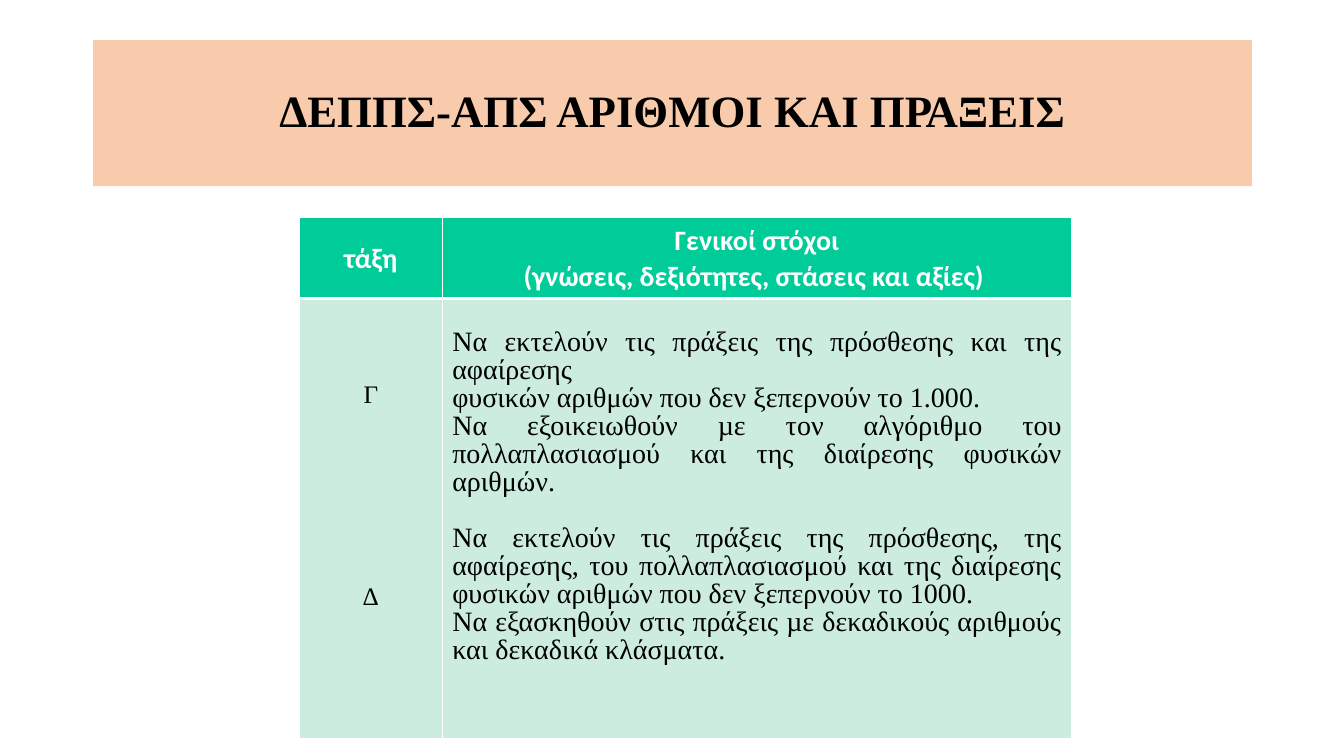
from pptx import Presentation
from pptx.dml.color import RGBColor
from pptx.enum.shapes import MSO_SHAPE
from pptx.enum.text import MSO_ANCHOR, PP_ALIGN
from pptx.oxml import parse_xml
from pptx.oxml.ns import nsdecls
from pptx.util import Emu, Pt

# Content
TITLE = "ΔΕΠΠΣ-ΑΠΣ ΑΡΙΘΜΟΙ ΚΑΙ ΠΡΑΞΕΙΣ"
HEADERS = ["τάξη", "Γενικοί στόχοι\v(γνώσεις, δεξιότητες, στάσεις και αξίες) "]
GRADES = ["Γ", "Δ"]
GOALS = [
    [
        "Να εκτελούν τις πράξεις της πρόσθεσης και της αφαίρεσης",
        "φυσικών αριθμών που δεν ξεπερνούν το 1.000.",
        "Να εξοικειωθούν µε τον αλγόριθμο του πολλαπλασιασμού και της διαίρεσης φυσικών αριθμών.",
    ],
    [
        "Να εκτελούν τις πράξεις της πρόσθεσης, της αφαίρεσης, του πολλαπλασιασμού "
        "και της διαίρεσης φυσικών αριθμών που δεν ξεπερνούν το 1000.",
        "Να εξασκηθούν στις πράξεις µε δεκαδικούς αριθμούς και δεκαδικά κλάσματα. ",
    ],
]

# Look and layout, lengths in px
SCALE = 914400 / 100.7
SLIDE_SIZE = (1343, 755)
TITLE_BOX = (93, 40, 1158, 146)
TABLE_LEFT, TABLE_TOP = 299, 217
COLUMNS = [143, 629]
ROWS = [79, 439]
GRADE_TOP, GOAL_TOP, HEADER_TOP = 85, 31, 5
GRADE_GAP, GOAL_GAP = Pt(126), Pt(20)
THIN, THICK = Pt(0.91), Pt(2.95)

PEACH = RGBColor(0xF8, 0xCB, 0xAD)
GREEN = RGBColor(0x00, 0xCC, 0x99)
MINT = RGBColor(0xCB, 0xEC, 0xDE)
WHITE = RGBColor(0xFF, 0xFF, 0xFF)
BLACK = RGBColor(0x00, 0x00, 0x00)
SERIF, SANS = "Times New Roman", "Calibri"


def px(length):
    return Emu(round(length * SCALE))


def write(frame, lines, size, font, color, bold, align, spacing, gaps=None):
    """Fill a text frame; gaps maps a paragraph index to the space before it."""
    for index, line in enumerate(lines):
        para = frame.add_paragraph() if index else frame.paragraphs[0]
        para.text = line
        para.alignment = align
        para.line_spacing = spacing
        para.space_before = (gaps or {}).get(index, Pt(0))
        for span in para.runs:
            span.font.size = Pt(size)
            span.font.name = font
            span.font.bold = bold
            span.font.color.rgb = color


def style_cell(cell, fill, top, anchor, borders):
    properties = cell._tc.get_or_add_tcPr()
    for side, width in zip("LRTB", borders):
        properties.append(parse_xml(
            f'<a:ln{side} {nsdecls("a")} w="{width}"><a:solidFill>'
            f'<a:srgbClr val="{WHITE}"/></a:solidFill></a:ln{side}>'))
    cell.fill.solid()
    cell.fill.fore_color.rgb = fill
    cell.margin_left = cell.margin_right = px(10)
    cell.margin_top, cell.margin_bottom = px(top), px(5)
    cell.vertical_anchor = anchor


deck = Presentation()
deck.slide_width, deck.slide_height = map(px, SLIDE_SIZE)
page = deck.slides.add_slide(deck.slide_layouts[6])

# Title band
band = page.shapes.add_shape(MSO_SHAPE.RECTANGLE, *map(px, TITLE_BOX))
band.shadow.inherit = False
band.fill.solid()
band.fill.fore_color.rgb = PEACH
band.line.fill.background()
band.text_frame.word_wrap = True
band.text_frame.vertical_anchor = MSO_ANCHOR.MIDDLE
write(band.text_frame, [TITLE], 32, SERIF, BLACK, True, PP_ALIGN.CENTER, 0.9)

# Table grid
table = page.shapes.add_table(
    len(ROWS), len(COLUMNS), px(TABLE_LEFT), px(TABLE_TOP),
    px(sum(COLUMNS)), px(sum(ROWS))).table
table.first_row = table.horz_banding = False
for column, width in zip(table.columns, COLUMNS):
    column.width = px(width)
for row, height in zip(table.rows, ROWS):
    row.height = px(height)

# Header row
for index, header in enumerate(HEADERS):
    cell = table.cell(0, index)
    style_cell(cell, GREEN, HEADER_TOP, MSO_ANCHOR.MIDDLE, (THIN, THIN, THIN, THICK))
    write(cell.text_frame, [header], 20, SANS, WHITE, True, PP_ALIGN.CENTER, 1.04)

# Body row: grades beside their goals
goal_lines = [line for group in GOALS for line in group]
body = [
    (GRADES, 18, PP_ALIGN.CENTER, GRADE_TOP, {1: GRADE_GAP}),
    (goal_lines, 20, PP_ALIGN.JUSTIFY, GOAL_TOP, {len(GOALS[0]): GOAL_GAP}),
]
for index, (lines, size, align, top, gaps) in enumerate(body):
    cell = table.cell(1, index)
    style_cell(cell, MINT, top, MSO_ANCHOR.TOP, (THIN, THIN, THICK, THIN))
    write(cell.text_frame, lines, size, SERIF, BLACK, False, align, 0.9, gaps)

deck.save("out.pptx")
